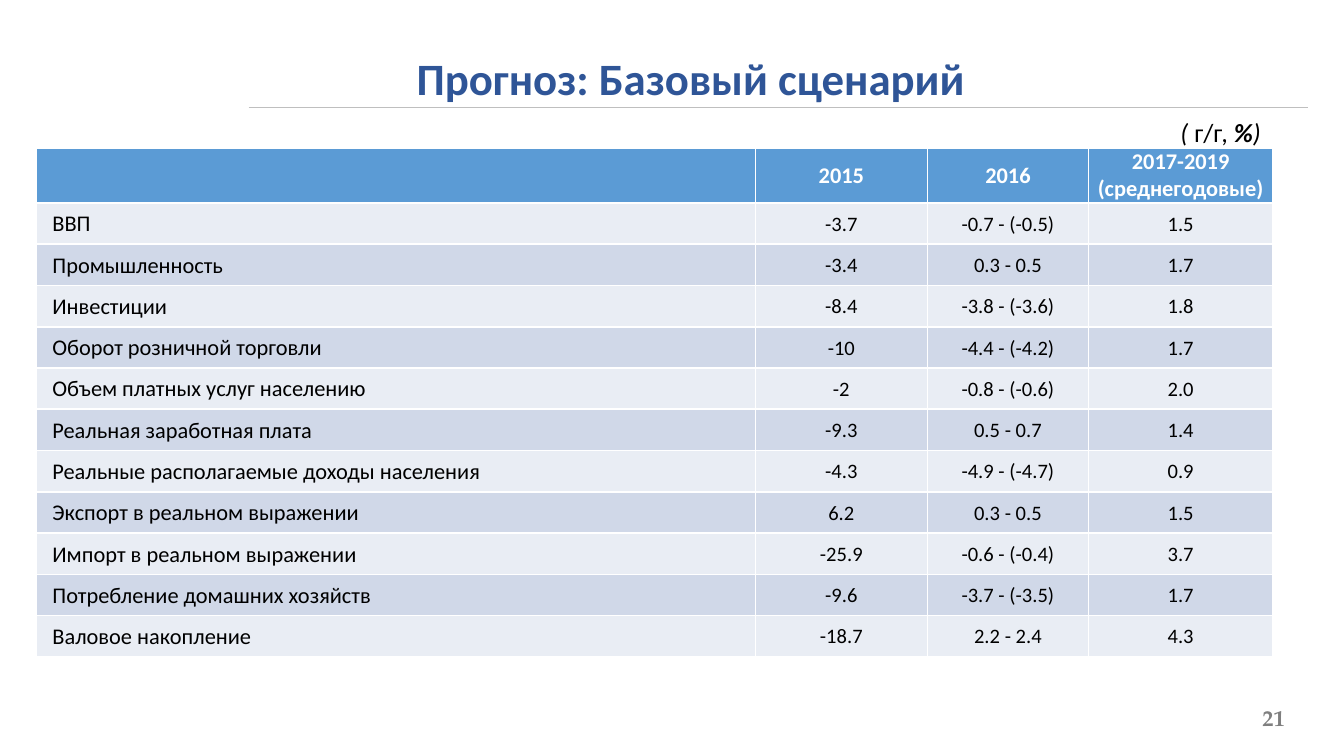
from lxml.etree import SubElement
from pptx import Presentation
from pptx.dml.color import RGBColor
from pptx.enum.shapes import MSO_CONNECTOR
from pptx.enum.text import MSO_ANCHOR, PP_ALIGN
from pptx.oxml.ns import qn
from pptx.util import Inches, Pt

WHITE = RGBColor(0xFF, 0xFF, 0xFF)
BLACK = RGBColor(0, 0, 0)
NAVY = RGBColor(0x2F, 0x55, 0x97)
GREY = RGBColor(0x7F, 0x7F, 0x7F)
RULE_GREY = RGBColor(0xBF, 0xBF, 0xBF)
HEADER_BLUE = RGBColor(0x5B, 0x9B, 0xD5)
BANDS = RGBColor(0xE9, 0xED, 0xF4), RGBColor(0xD0, 0xD8, 0xE8)

WIDTH = 10
HEIGHT = WIDTH * 9 / 16
TITLE = "Прогноз: Базовый сценарий"
UNITS = [("( ", {"italic": True}), ("г/г, ", {}),
         ("%", {"bold": True, "italic": True}), (")", {"italic": True})]
HEADER = ("", "2015", "2016", "2017-2019 (среднегодовые)")
FORECAST = [
    ("ВВП", "-3.7", "-0.7 - (-0.5)", "1.5"),
    ("Промышленность", "-3.4", "0.3 - 0.5", "1.7"),
    ("Инвестиции", "-8.4", "-3.8 - (-3.6)", "1.8"),
    ("Оборот розничной торговли", "-10", "-4.4 - (-4.2)", "1.7"),
    ("Объем платных услуг населению", "-2", "-0.8 - (-0.6)", "2.0"),
    ("Реальная заработная плата", "-9.3", "0.5 - 0.7", "1.4"),
    ("Реальные располагаемые доходы населения", "-4.3", "-4.9 - (-4.7)", "0.9"),
    ("Экспорт в реальном выражении", "6.2", "0.3 - 0.5", "1.5"),
    ("Импорт в реальном выражении", "-25.9", "-0.6 - (-0.4)", "3.7"),
    ("Потребление домашних хозяйств", "-9.6", "-3.7 - (-3.5)", "1.7"),
    ("Валовое накопление", "-18.7", "2.2 - 2.4", "4.3"),
]
TABLE_LEFT, TABLE_TOP, TABLE_HEIGHT = 0.27, 1.1, 3.79
COLUMN_WIDTHS = (5.35, 1.28, 1.2, 1.37)
HEADER_HEIGHT = 0.41


def set_margins(frame, left, top, right, bottom):
    frame.margin_left, frame.margin_top = Inches(left), Inches(top)
    frame.margin_right, frame.margin_bottom = Inches(right), Inches(bottom)


def add_span(para, text, color, size, name="Calibri", **formats):
    span = para.add_run()
    span.text = text
    span.font.color.rgb = color
    for key, value in {"size": Pt(size), "name": name, **formats}.items():
        setattr(span.font, key, value)


def add_box(page, place, align):
    """Add an empty text box and return its frame and first paragraph."""
    frame = page.shapes.add_textbox(*map(Inches, place)).text_frame
    frame.word_wrap = True
    frame.paragraphs[0].alignment = align
    return frame, frame.paragraphs[0]


def add_borders(cell):
    properties = cell._tc.get_or_add_tcPr()
    for side in "LRTB":
        line = SubElement(properties, qn(f"a:ln{side}"), w=str(Pt(1)))
        fill = SubElement(line, qn("a:solidFill"))
        SubElement(fill, qn("a:srgbClr"), val=str(WHITE))


def fill_cell(cell, text, row, column):
    is_header, is_label = row == 0, column == 0
    add_borders(cell)
    cell.fill.solid()
    cell.fill.fore_color.rgb = HEADER_BLUE if is_header else BANDS[(row - 1) % 2]
    cell.vertical_anchor = MSO_ANCHOR.MIDDLE
    edge = 0 if is_header else 0.01
    set_margins(cell, 0.12 if is_label else edge, edge, edge, 0)
    para = cell.text_frame.paragraphs[0]
    para.alignment = PP_ALIGN.LEFT if is_label else PP_ALIGN.CENTER
    if text:
        add_span(para, text, WHITE if is_header else BLACK,
                 12 if is_header or is_label else 11, bold=is_header)


def add_forecast_table(page):
    rows = [HEADER, *FORECAST]
    table = page.shapes.add_table(
        len(rows), len(HEADER), Inches(TABLE_LEFT), Inches(TABLE_TOP),
        Inches(sum(COLUMN_WIDTHS)), Inches(TABLE_HEIGHT)).table
    for column, width in zip(table.columns, COLUMN_WIDTHS):
        column.width = Inches(width)
    row_height = (TABLE_HEIGHT - HEADER_HEIGHT) / len(FORECAST)
    for r, values in enumerate(rows):
        table.rows[r].height = Inches(row_height if r else HEADER_HEIGHT)
        for c, text in enumerate(values):
            fill_cell(table.cell(r, c), text, r, c)


def add_title_rule(page):
    rule = page.shapes.add_connector(
        MSO_CONNECTOR.STRAIGHT, *map(Inches, (1.85, 0.8, 9.73, 0.8)))
    rule.line.color.rgb = RULE_GREY
    rule.line.width = Pt(1)
    SubElement(rule._element.spPr, qn("a:effectLst"))


def main():
    deck = Presentation()
    deck.slide_width, deck.slide_height = Inches(WIDTH), Inches(HEIGHT)
    page = deck.slides.add_slide(deck.slide_layouts[6])

    add_title_rule(page)
    frame, para = add_box(page, (9.08, 5.29, 0.48, 0.1), PP_ALIGN.RIGHT)
    frame.word_wrap = False
    frame.vertical_anchor = MSO_ANCHOR.MIDDLE
    set_margins(frame, 0, 0, 0, 0)
    add_span(para, "21", GREY, 12, "TeX Gyre Pagella", bold=True)

    add_forecast_table(page)
    _, para = add_box(page, (0.81, 0.33, 8.66, 0.5), PP_ALIGN.CENTER)
    add_span(para, TITLE, NAVY, 24, bold=True)
    _, para = add_box(page, (8.46, 0.82, 1.02, 0.34), PP_ALIGN.RIGHT)
    for text, formats in UNITS:
        add_span(para, text, BLACK, 14, **formats)

    deck.save("out.pptx")


if __name__ == "__main__":
    main()
